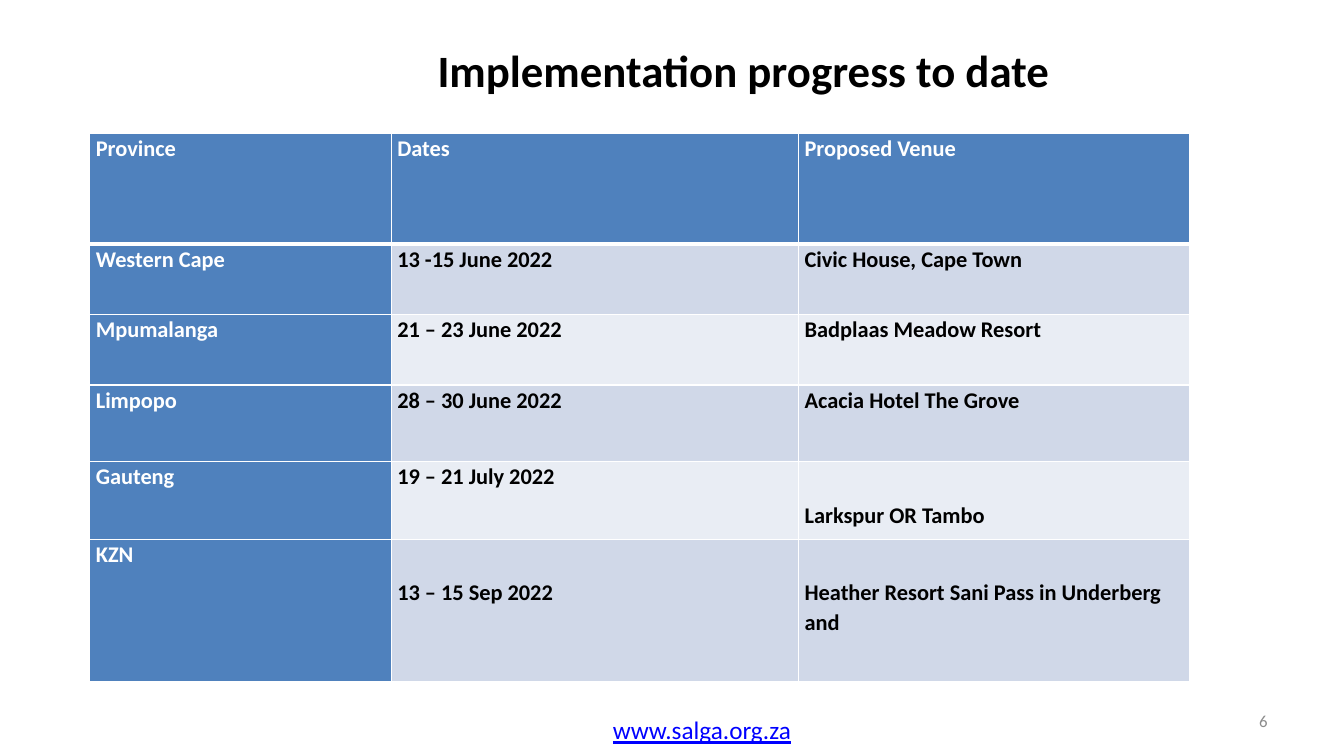
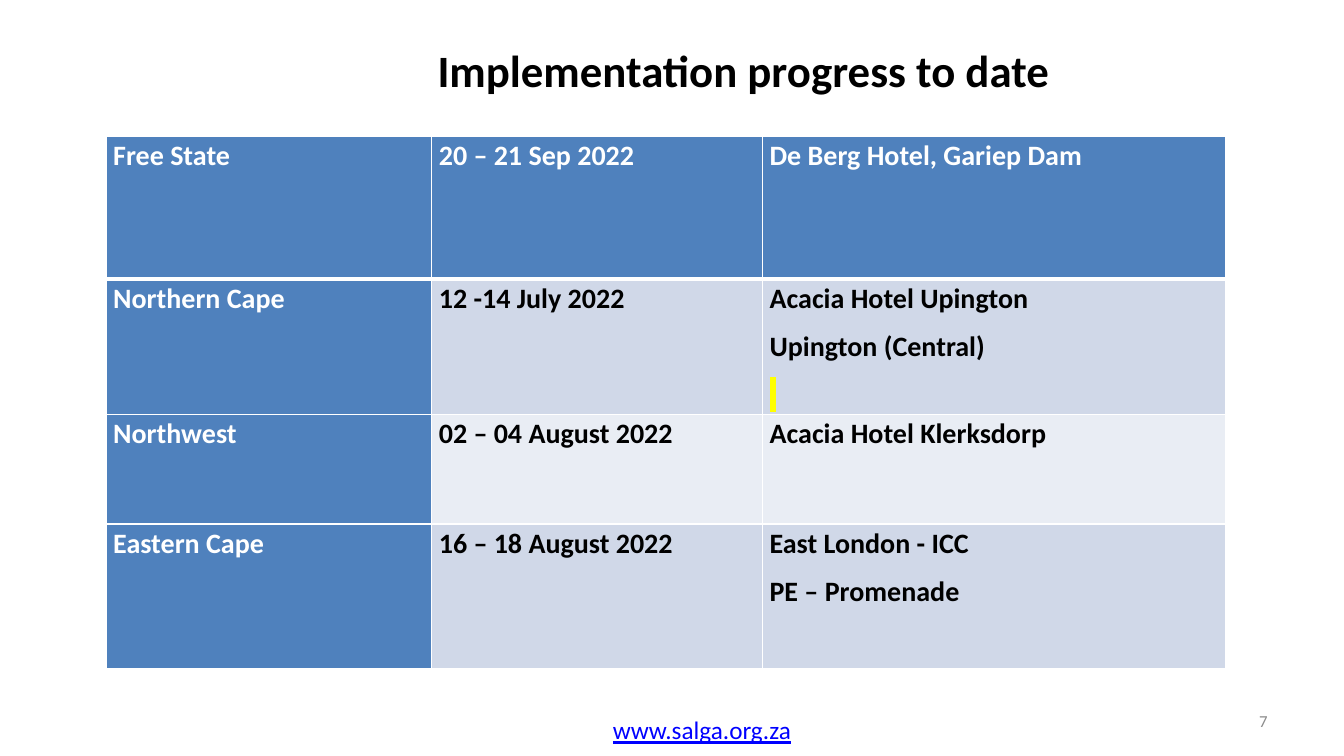
from dataclasses import dataclass

from lxml import etree
from pptx import Presentation
from pptx.dml.color import RGBColor
from pptx.enum.text import MSO_ANCHOR, PP_ALIGN
from pptx.oxml.ns import qn
from pptx.util import Emu, Inches, Pt

CENTER, LEFT, RIGHT = PP_ALIGN.CENTER, PP_ALIGN.LEFT, PP_ALIGN.RIGHT
TOP, MIDDLE = MSO_ANCHOR.TOP, MSO_ANCHOR.MIDDLE
WIDTH, HEIGHT = Inches(13.33), Inches(7.5)
TITLE_ONLY = 5


@dataclass(frozen=True)
class Theme:
    font: str = "Calibri"
    white: str = "FFFFFF"
    black: str = "000000"
    header: str = "4F81BD"
    bands: tuple = ("D0D8E8", "E9EDF4")
    link: str = "0000FF"
    grey: str = "8C8C8C"
    marker: str = "FFFF00"
    title_size: int = 32
    footer_size: int = 18
    number_size: int = 12
    thin: int = 1
    thick: int = 3


THEME = Theme()


@dataclass(frozen=True)
class TableLook:
    """Lengths are percentages of the slide's width or height."""
    left: float
    top: float
    cols: tuple
    rows: tuple
    size: int
    inset: float


@dataclass(frozen=True)
class Lowered:
    """Cell text that starts one line further down."""
    text: str


@dataclass(frozen=True)
class Marked:
    """Text with a marker-pen background."""
    text: str


# Content
TITLE = "Implementation progress to date "
FOOTER = "www.salga.org.za"
LINE_DROP = 5.07

FIRST_LOOK = TableLook(6.68, 17.6, (22.43, 30.31, 29.11),
                       (14.67, 9.33, 9.33, 10.13, 10.27, 18.8), 16, 0.06)
FIRST_ROWS = [
    ("Province", "Dates", "Proposed Venue"),
    ("Western Cape", "13 -15 June 2022", "Civic House, Cape Town"),
    ("Mpumalanga", "21 – 23 June 2022", "Badplaas Meadow Resort"),
    ("Limpopo", "28 – 30 June 2022", "Acacia Hotel The Grove"),
    ("Gauteng", "19 – 21 July 2022", Lowered("Larkspur OR Tambo")),
    ("KZN", Lowered("13 – 15 Sep 2022"),
     Lowered("Heather Resort Sani Pass in Underberg and")),
]

SECOND_LOOK = TableLook(7.9, 18, (24.23, 24.61, 34.43),
                        (18.93, 17.87, 14.53, 19.07), 20, 0.07)
SECOND_ROWS = [
    ("Free State", "20 – 21 Sep 2022", "De Berg Hotel, Gariep Dam"),
    ("Northern Cape", "12 -14 July 2022",
     ["Acacia Hotel Upington", "Upington (Central)", Marked(" ")]),
    ("Northwest", "02 – 04 August 2022", "Acacia Hotel Klerksdorp"),
    ("Eastern Cape", "16 – 18 August 2022",
     ["East London - ICC", "PE – Promenade"]),
]


def x(percent):
    return Emu(round(WIDTH * percent / 100))


def y(percent):
    return Emu(round(HEIGHT * percent / 100))


def place(sp, left, top, width, height):
    sp.left, sp.top, sp.width, sp.height = x(left), y(top), x(width), y(height)


def add_run(p, text, size, color, bold=False, underline=False):
    r = p.add_run()
    r.text = text
    font = r.font
    font.name, font.size = THEME.font, Pt(size)
    font.bold, font.underline = bold, underline
    font.color.rgb = RGBColor.from_string(color)
    return r


def highlight(r, color):
    mark = etree.Element(qn("a:highlight"))
    etree.SubElement(mark, qn("a:srgbClr"), val=color)
    r.font._element.find(qn("a:solidFill")).addnext(mark)


def set_line(sp, text, size, color, align, anchor, **style):
    tf = sp.text_frame
    tf.word_wrap = True
    tf.vertical_anchor = anchor
    p = tf.paragraphs[0]
    p.alignment = align
    add_run(p, text, size, color, **style)


def add_label(slide, box, *args, **style):
    sp = slide.shapes.add_textbox(0, 0, 0, 0)
    place(sp, *box)
    set_line(sp, *args, **style)


def set_borders(cell, top, bottom):
    tc_pr = cell._tc.get_or_add_tcPr()
    thin = THEME.thin
    for side, width in (("L", thin), ("R", thin), ("T", top), ("B", bottom)):
        ln = etree.SubElement(tc_pr, qn(f"a:ln{side}"), w=str(Pt(width)))
        fill = etree.SubElement(ln, qn("a:solidFill"))
        etree.SubElement(fill, qn("a:srgbClr"), val=THEME.white)


def fill_cell(cell, content, look, color):
    cell.margin_left = cell.margin_right = Inches(look.inset)
    cell.margin_top = cell.margin_bottom = 0
    if isinstance(content, Lowered):
        cell.margin_top = y(LINE_DROP)
        content = content.text
    lines = content if isinstance(content, list) else [content]
    tf = cell.text_frame
    for i, line in enumerate(lines):
        p = tf.add_paragraph() if i else tf.paragraphs[0]
        p.alignment = LEFT
        p.line_spacing = 1.07
        p.space_after = Pt(8)
        marked = isinstance(line, Marked)
        r = add_run(p, line.text if marked else line, look.size, color, bold=True)
        if marked:
            highlight(r, THEME.marker)


def add_schedule(slide, look, rows):
    table = slide.shapes.add_table(
        len(rows), len(look.cols), x(look.left), y(look.top),
        x(sum(look.cols)), y(sum(look.rows))).table
    table.first_col = True
    for column, width in zip(table.columns, look.cols):
        column.width = x(width)
    for i, (row, height) in enumerate(zip(table.rows, look.rows)):
        row.height = y(height)
        for j, content in enumerate(rows[i]):
            cell = row.cells[j]
            heading = i == 0 or j == 0
            # A thick rule divides the heading row from the body
            set_borders(cell, THEME.thick if i == 1 else THEME.thin,
                        THEME.thick if i == 0 else THEME.thin)
            cell.fill.solid()
            cell.fill.fore_color.rgb = RGBColor.from_string(
                THEME.header if heading else THEME.bands[(i - 1) % 2])
            fill_cell(cell, content, look,
                      THEME.white if heading else THEME.black)


def add_slide(prs, number, look, rows):
    slide = prs.slides.add_slide(prs.slide_layouts[TITLE_ONLY])
    # Title
    title = slide.shapes.title
    place(title, 25.28, 4, 60.84, 10.53)
    set_line(title, TITLE, THEME.title_size, THEME.black, CENTER, MIDDLE,
             bold=True)
    # Schedule
    add_schedule(slide, look, rows)
    # Footer and slide number
    add_label(slide, (40.9, 93.87, 22.66, 5.33), FOOTER, THEME.footer_size,
              THEME.link, CENTER, TOP, underline=True)
    add_label(slide, (71.72, 92.67, 23.33, 5.33), str(number),
              THEME.number_size, THEME.grey, RIGHT, MIDDLE)


def main():
    prs = Presentation()
    prs.slide_width, prs.slide_height = WIDTH, HEIGHT
    add_slide(prs, 6, FIRST_LOOK, FIRST_ROWS)
    add_slide(prs, 7, SECOND_LOOK, SECOND_ROWS)
    prs.save("out.pptx")


if __name__ == "__main__":
    main()
